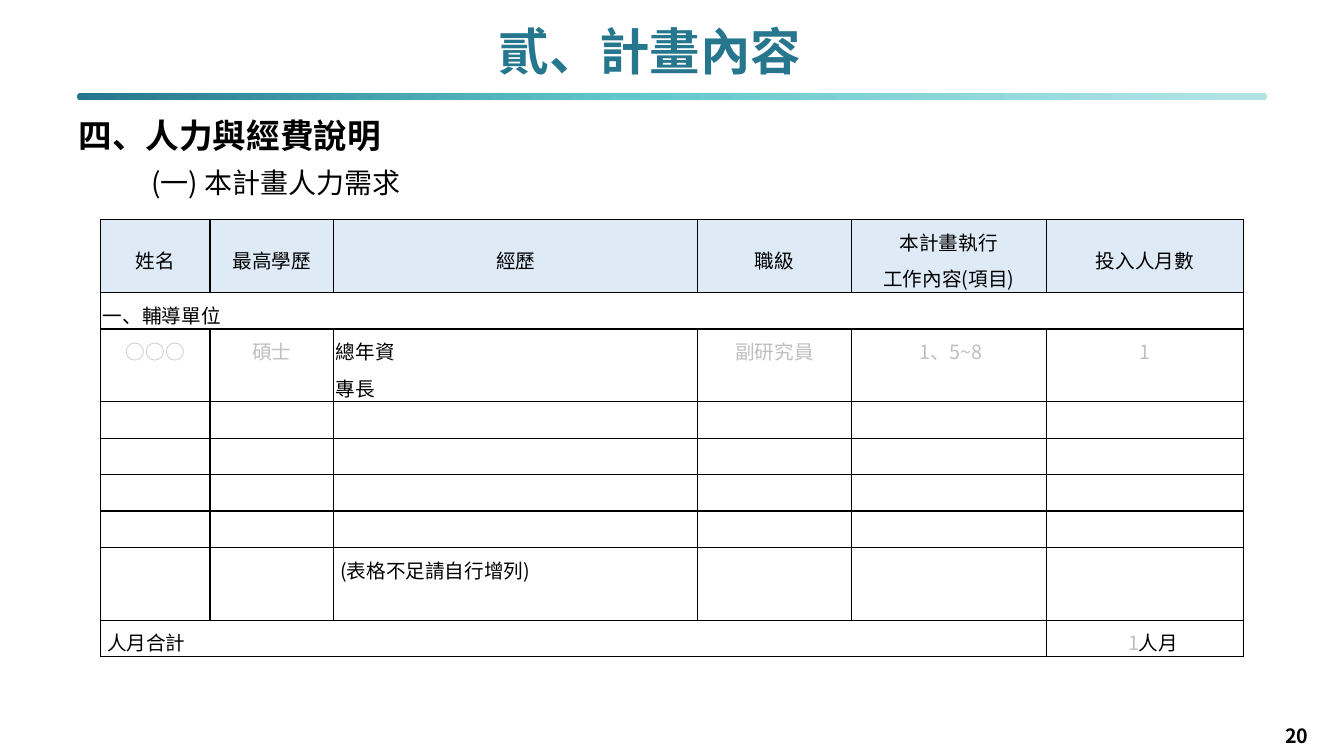
from copy import deepcopy

from lxml import etree
from pptx import Presentation
from pptx.dml.color import RGBColor
from pptx.enum.shapes import MSO_SHAPE
from pptx.enum.text import MSO_ANCHOR, PP_ALIGN
from pptx.oxml import parse_xml
from pptx.oxml.ns import nsdecls, qn
from pptx.util import Pt

ROUNDED = MSO_SHAPE.ROUNDED_RECTANGLE
TOP, MIDDLE = MSO_ANCHOR.TOP, MSO_ANCHOR.MIDDLE
LEFT, CENTER, JUSTIFY = PP_ALIGN.LEFT, PP_ALIGN.CENTER, PP_ALIGN.JUSTIFY
FONT = "Noto Sans CJK SC"
BLACK, GRAY, TEAL, HEADER = "000000", "BFBFBF", "26768E", "DEEBF7"
LINE = 26

rgb = RGBColor.from_string


def write(p, text, size=14, color=BLACK, bold=False, align=LEFT, spacing=None):
    """Add a run to paragraph p and format both."""
    p.alignment = align
    p.line_spacing = spacing
    r = p.add_run()
    r.text = text
    r.font.name = FONT
    r.font.size = Pt(size)
    r.font.bold = bold
    r.font.color.rgb = rgb(color)
    etree.SubElement(r.font._element, qn("a:ea"), typeface=FONT)


prs = Presentation()
prs.slide_width, prs.slide_height = Pt(960), Pt(540)
s = prs.slides.add_slide(prs.slide_layouts[6])

# Rule under the title
rule = s.shapes.add_shape(ROUNDED, Pt(55), Pt(66.25), Pt(850), Pt(5.5))
rule.adjustments[0] = 0.5
rule.shadow.inherit = False
rule.line.fill.background()
rule.fill.gradient()
rule.fill.gradient_angle = 0
stop_list = rule._element.spPr.find(".//" + qn("a:gsLst"))
stop_list.insert(1, deepcopy(stop_list[0]))
stops = [(0, TEAL), (0.46, "61C7CB"), (0.97, "B1E3E5")]
for stop, (position, color) in zip(rule.fill.gradient_stops, stops):
    stop.position = position
    stop.color.rgb = rgb(color)

# Title, headings and page number
texts = [
    ("貳、計畫內容", (348, 15, 232.5, 47), MIDDLE,
     dict(size=36, color=TEAL, bold=True, align=CENTER, spacing=0.9)),
    ("四、人力與經費說明", (49, 83, 598, 31.5), MIDDLE,
     dict(size=24, bold=True, spacing=Pt(24))),
    ("(一) 本計畫人力需求", (101, 114.5, 602, 32), TOP, dict(size=20)),
    ("20", (911, 513.5, 45, 26.5), TOP, dict(bold=True)),
]
for text, box, anchor, style in texts:
    tf = s.shapes.add_textbox(*map(Pt, box)).text_frame
    tf.word_wrap = True
    tf.vertical_anchor = anchor
    if anchor == MIDDLE:
        tf.margin_top = tf.margin_bottom = 0
    write(tf.paragraphs[0], text, **style)

# Staffing table: row heights are whole numbers of text lines
widths = [78, 88.5, 260, 109.5, 139.5, 141]
row_lines = [2, 1, 2, 1, 1, 1, 1, 2, 1]
last_row, last_col = len(row_lines) - 1, len(widths) - 1
table = s.shapes.add_table(len(row_lines), len(widths), Pt(72), Pt(157),
                           Pt(sum(widths)), Pt(LINE * sum(row_lines))).table
for column, width in zip(table.columns, widths):
    column.width = Pt(width)
for row, lines in zip(table.rows, row_lines):
    row.height = Pt(LINE * lines)

for r, row in enumerate(table.rows):
    for cell in row.cells:
        cell.margin_left = cell.margin_right = Pt(1.5)
        cell.margin_top = cell.margin_bottom = 0
        cell.text_frame.paragraphs[0].line_spacing = Pt(LINE)
        for side in ("lnL", "lnR", "lnT", "lnB"):
            cell._tc.get_or_add_tcPr().append(parse_xml(
                f'<a:{side} {nsdecls("a")} w="12700"><a:solidFill>'
                f'<a:srgbClr val="{BLACK}"/></a:solidFill></a:{side}>'))
        if r == 0:
            cell.fill.solid()
            cell.fill.fore_color.rgb = rgb(HEADER)
        else:
            cell.fill.background()
table.cell(1, 0).merge(table.cell(1, last_col))
table.cell(last_row, 0).merge(table.cell(last_row, last_col - 1))

headers = ["姓名", "最高學歷", "經歷", "職級", "本計畫執行\n工作內容(項目)", "投入人月數"]
person = ["○○○", "碩士", "總年資\n專長", "副研究員", "1、5~8", "1"]
entries = [(0, c, text, BLACK, CENTER) for c, text in enumerate(headers)]
entries += [(2, c, text, GRAY, CENTER) if c != 2 else (2, c, text, BLACK, JUSTIFY)
            for c, text in enumerate(person)]
entries += [
    (1, 0, "一、輔導單位", BLACK, JUSTIFY),
    (7, 2, "(表格不足請自行增列)", BLACK, JUSTIFY),
    (last_row, 0, "人月合計", BLACK, LEFT),
    (last_row, last_col, "1", GRAY, CENTER),
]
for r, c, text, color, align in entries:
    cell = table.cell(r, c)
    lines = text.split("\n")
    if r == 0 and len(lines) == 1:
        cell.vertical_anchor = MIDDLE
    for i, line in enumerate(lines):
        tf = cell.text_frame
        p = tf.add_paragraph() if i else tf.paragraphs[0]
        write(p, line, color=color, align=align, spacing=Pt(LINE))

total = table.cell(last_row, last_col)
write(total.text_frame.paragraphs[0], "人月", align=CENTER, spacing=Pt(LINE))
for cell, indent in [(total, 13), (table.cell(2, 4), 4.5),
                     (table.cell(7, 2), 4.5), (table.cell(last_row, 0), 4.5)]:
    cell.margin_left = Pt(indent)

prs.save("out.pptx")
